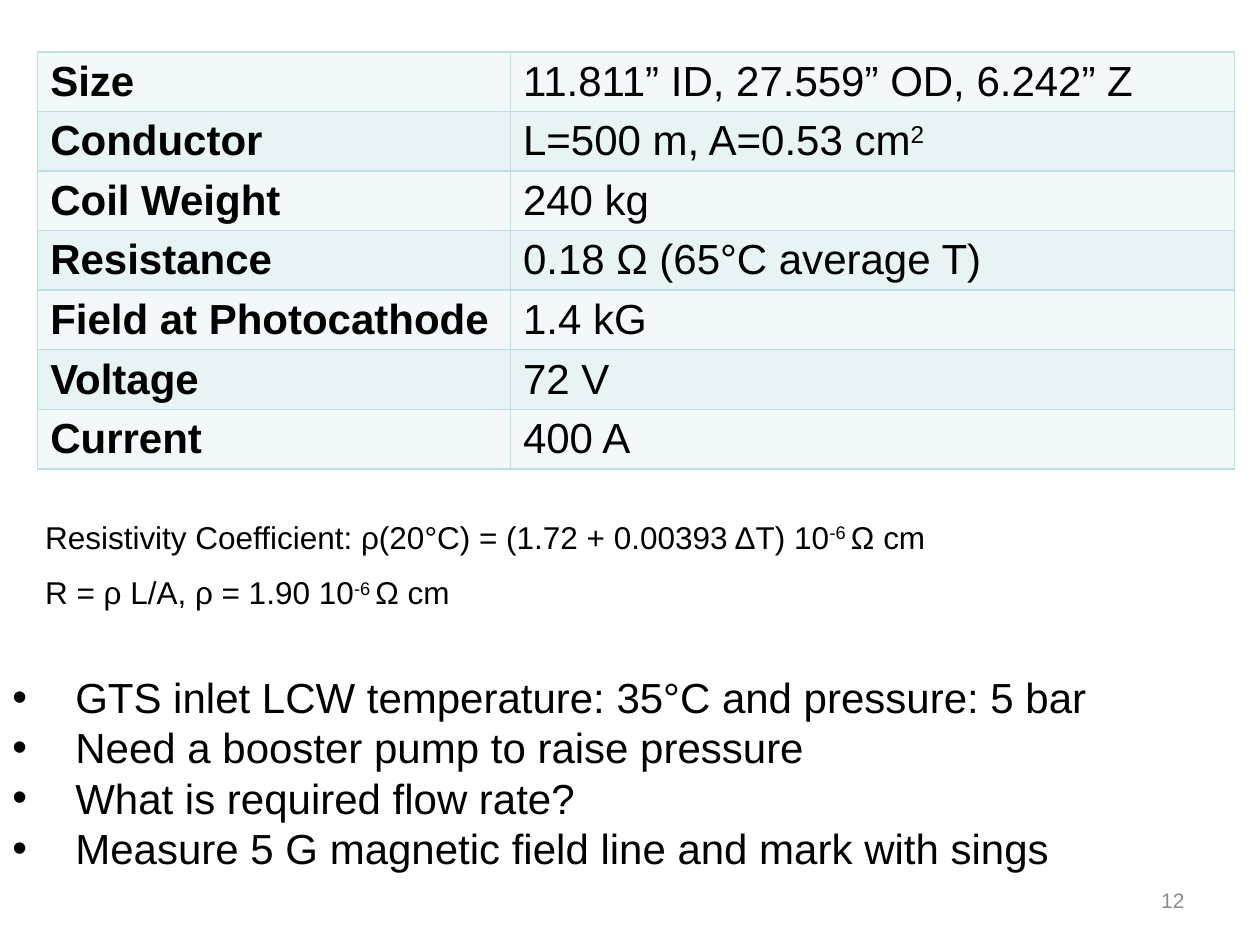
from dataclasses import dataclass

import pptx
import pptx.dml.color
import pptx.enum.text
import pptx.oxml
import pptx.oxml.ns
import pptx.util
from pptx.util import Cm

FONT = "Arial"
BLACK = "000000"
GREY = "8C8C8C"
BORDER = "BBE0E3"
BANDS = ("F3F9FA", "E7F3F4")
ROW_HEIGHT = 1.2
COLUMN_WIDTHS = (9.53, 14.6)
INDENT = 1.27


@dataclass(frozen=True)
class Piece:
    text: str
    raised: bool = False


@dataclass(frozen=True)
class Property:
    name: str
    value: tuple[Piece, ...]


@dataclass(frozen=True)
class TextBlock:
    left: float
    top: float
    width: float
    height: float
    size: int
    lines: tuple[tuple[Piece, ...], ...]
    color: str = BLACK
    bulleted: bool = False
    right_aligned: bool = False


PROPERTIES = (
    Property("Size", (Piece("11.811” ID, 27.559” OD, 6.242” Z"),)),
    Property("Conductor", (Piece("L=500 m, A=0.53 cm"), Piece("2", True))),
    Property("Coil Weight", (Piece("240 kg"),)),
    Property("Resistance", (Piece("0.18 Ω (65°C average T)"),)),
    Property("Field at Photocathode", (Piece("1.4 kG"),)),
    Property("Voltage", (Piece("72 V"),)),
    Property("Current", (Piece("400 A"),)),
)

RESISTIVITY_UNIT = (Piece("-6 ", True), Piece("Ω cm"))

TEXT_BLOCKS = (
    TextBlock(18.2, 17.65, 5.93, 1.01, 12, ((Piece("12"),),), GREY, right_aligned=True),
    TextBlock(0, 13.41, 22.58, 4.37, 24, (
        (Piece("GTS inlet LCW temperature: 35°C and pressure: 5 bar"),),
        (Piece("Need a booster pump to raise pressure"),),
        (Piece("What is required flow rate?"),),
        (Piece("Measure 5 G magnetic field line and mark with sings"),),
    ), bulleted=True),
    TextBlock(0.66, 10.31, 18.72, 1.02, 18, (
        (Piece("Resistivity Coefficient: ρ(20°C) = (1.72 + 0.00393 ΔT) 10"), *RESISTIVITY_UNIT),
    )),
    TextBlock(0.66, 11.43, 9.04, 1.02, 18, (
        (Piece("R = ρ L/A, ρ = 1.90 10"), *RESISTIVITY_UNIT),
    )),
)


def rgb(color: str) -> pptx.dml.color.RGBColor:
    return pptx.dml.color.RGBColor.from_string(color)


def add_runs(paragraph, pieces: tuple[Piece, ...], size: int, color: str = BLACK,
             bold: bool = False) -> None:
    for piece in pieces:
        run = paragraph.add_run()
        run.text = piece.text
        run.font.name = FONT
        run.font.size = pptx.util.Pt(size)
        run.font.bold = bold
        run.font.color.rgb = rgb(color)
        if piece.raised:
            run.font._element.set("baseline", "30000")


def add_bullet(paragraph) -> None:
    properties = paragraph._p.get_or_add_pPr()
    properties.set("marL", str(Cm(INDENT)))
    properties.set("indent", str(-Cm(INDENT)))
    for tag, attribute, value in (("buFont", "typeface", FONT), ("buChar", "char", "•")):
        bullet = pptx.oxml.parse_xml(f'<a:{tag} {pptx.oxml.ns.nsdecls("a")} {attribute}="{value}"/>')
        properties.append(bullet)


def fill_cell(cell, pieces: tuple[Piece, ...], fill: str, bold: bool) -> None:
    """Write the cell text and set its fill and thin borders on all sides."""
    add_runs(cell.text_frame.paragraphs[0], pieces, 24, bold=bold)
    properties = cell._tc.get_or_add_tcPr()
    for side in ("lnL", "lnR", "lnT", "lnB"):
        properties.append(pptx.oxml.parse_xml(
            f'<a:{side} {pptx.oxml.ns.nsdecls("a")} w="{pptx.util.Pt(1)}">'
            f'<a:solidFill><a:srgbClr val="{BORDER}"/></a:solidFill></a:{side}>'))
    cell.fill.solid()
    cell.fill.fore_color.rgb = rgb(fill)


def add_property_table(slide) -> None:
    table = slide.shapes.add_table(
        len(PROPERTIES), len(COLUMN_WIDTHS), Cm(0.76), Cm(1.05),
        Cm(sum(COLUMN_WIDTHS)), Cm(ROW_HEIGHT * len(PROPERTIES))).table
    table.first_row = False
    table.horz_banding = False
    for column, width in zip(table.columns, COLUMN_WIDTHS):
        column.width = Cm(width)
    for index, item in enumerate(PROPERTIES):
        fill = BANDS[index % len(BANDS)]
        fill_cell(table.cell(index, 0), (Piece(item.name),), fill, bold=True)
        fill_cell(table.cell(index, 1), item.value, fill, bold=False)


def add_text_block(slide, block: TextBlock) -> None:
    shape = slide.shapes.add_textbox(
        Cm(block.left), Cm(block.top), Cm(block.width), Cm(block.height))
    frame = shape.text_frame
    frame.word_wrap = block.right_aligned
    if block.right_aligned:
        frame.vertical_anchor = pptx.enum.text.MSO_ANCHOR.MIDDLE
    else:
        frame.auto_size = pptx.enum.text.MSO_AUTO_SIZE.SHAPE_TO_FIT_TEXT
    for index, pieces in enumerate(block.lines):
        paragraph = frame.add_paragraph() if index else frame.paragraphs[0]
        if block.bulleted:
            add_bullet(paragraph)
        if block.right_aligned:
            paragraph.alignment = pptx.enum.text.PP_ALIGN.RIGHT
        add_runs(paragraph, pieces, block.size, block.color)


def main() -> None:
    presentation = pptx.Presentation()
    presentation.slide_width = Cm(25.4)
    presentation.slide_height = Cm(19.05)
    slide = presentation.slides.add_slide(presentation.slide_layouts[6])
    add_property_table(slide)
    for block in TEXT_BLOCKS:
        add_text_block(slide, block)
    presentation.save("out.pptx")


if __name__ == "__main__":
    main()
